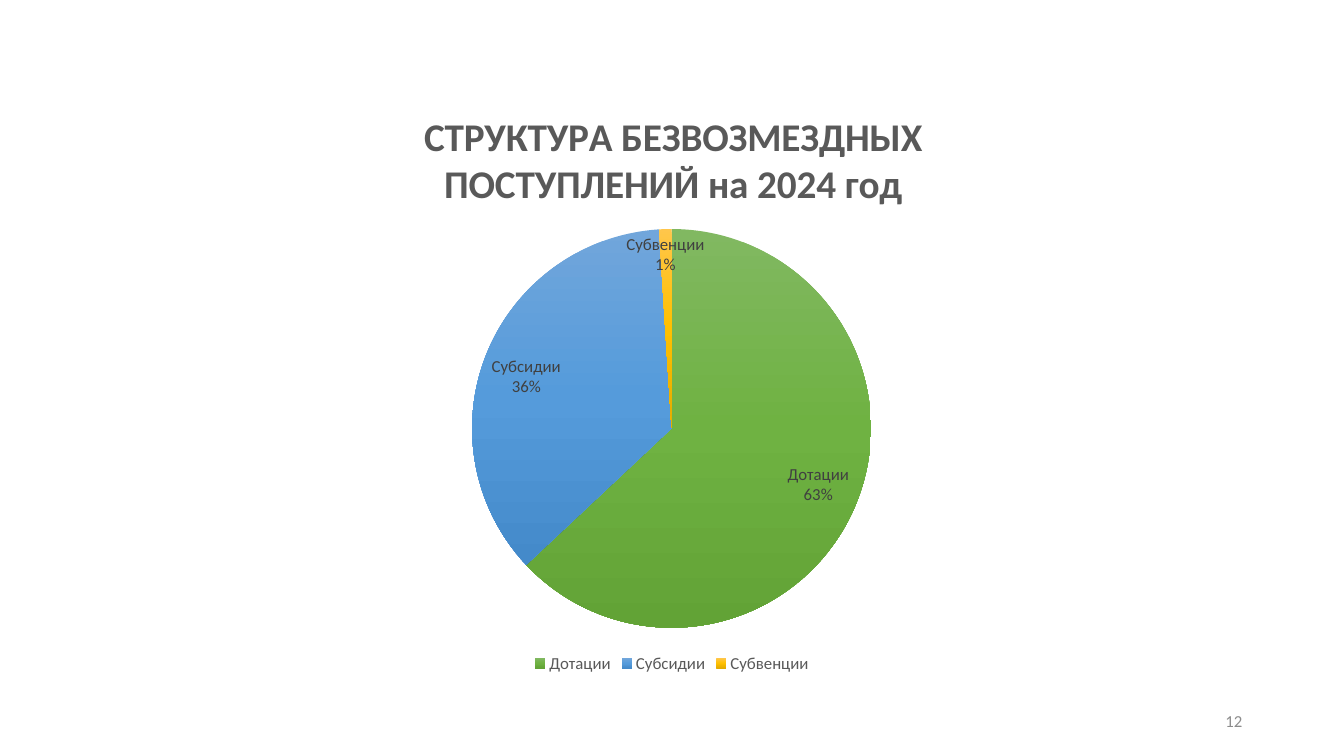
from copy import deepcopy

from pptx import Presentation
from pptx.chart.data import CategoryChartData
from pptx.dml.color import RGBColor
from pptx.enum.chart import XL_CHART_TYPE, XL_LABEL_POSITION, XL_LEGEND_POSITION
from pptx.enum.text import MSO_ANCHOR, PP_ALIGN
from pptx.oxml import parse_xml
from pptx.oxml.ns import nsdecls
from pptx.util import Inches, Pt

PIE = XL_CHART_TYPE.PIE
INSIDE_END = XL_LABEL_POSITION.INSIDE_END
BOTTOM = XL_LEGEND_POSITION.BOTTOM
MIDDLE = MSO_ANCHOR.MIDDLE
RIGHT = PP_ALIGN.RIGHT

FONT = "Calibri"
BLACK = RGBColor(0x00, 0x00, 0x00)
TITLE_GREY = RGBColor(0x59, 0x59, 0x59)
LABEL_GREY = RGBColor(0x40, 0x40, 0x40)
NUMBER_GREY = RGBColor(0x8C, 0x8C, 0x8C)
GREENS = [RGBColor(0x81, 0xB8, 0x61), RGBColor(0x6F, 0xB2, 0x42), RGBColor(0x62, 0xA3, 0x36)]
BLUES = [RGBColor(0x71, 0xA6, 0xDB), RGBColor(0x55, 0x9B, 0xDB), RGBColor(0x44, 0x8A, 0xCA)]
GOLDS = [RGBColor(0xFF, 0xC6, 0x4B), RGBColor(0xFF, 0xC0, 0x00), RGBColor(0xE3, 0xAB, 0x00)]

TITLE = ["СТРУКТУРА БЕЗВОЗМЕЗДНЫХ", "ПОСТУПЛЕНИЙ на 2024 год"]
RECEIPTS = [("Дотации", 63, GREENS), ("Субсидии", 36, BLUES), ("Субвенции", 1, GOLDS)]


def set_font(font, size, color, bold=False):
    font.name = FONT
    font.size = Pt(size)
    font.bold = bold
    font.color.rgb = color


def write(p, text, size=12, color=BLACK, bold=False, align=None):
    p.alignment = align
    r = p.add_run()
    r.text = text
    set_font(r.font, size, color, bold)


def layout_xml(x, y, w=None, h=None):
    """Manual chart layout in fractions of the chart area."""
    target = '<c:layoutTarget val="inner"/>' if w else ""
    size = f'<c:w val="{w}"/><c:h val="{h}"/>' if w else ""
    return parse_xml(
        f'<c:layout {nsdecls("c")}><c:manualLayout>{target}'
        '<c:xMode val="edge"/><c:yMode val="edge"/>'
        f'<c:x val="{x}"/><c:y val="{y}"/>{size}</c:manualLayout></c:layout>')


def fill_gradient(fill, colors):
    """Three even stops running from top to bottom."""
    fill.gradient()
    fill.gradient_angle = 270
    stops = fill.gradient_stops
    first = stops[0]._gs
    first.addnext(deepcopy(first))
    for i, (stop, color) in enumerate(zip(fill.gradient_stops, colors)):
        stop.position = i / 2
        stop.color.rgb = color


def add_pie(slide, x, y, w, h):
    data = CategoryChartData()
    data.categories = [name for name, _, _ in RECEIPTS]
    data.add_series("Series 1", [value for _, value, _ in RECEIPTS])
    chart = slide.shapes.add_chart(
        PIE, Inches(x), Inches(y), Inches(w), Inches(h), data).chart
    set_font(chart.font, 10, BLACK)

    # Title
    chart.has_title = True
    tf = chart.chart_title.text_frame
    for i, line in enumerate(TITLE):
        p = tf.add_paragraph() if i else tf.paragraphs[0]
        write(p, line, size=28, color=TITLE_GREY, bold=True)
    title = chart.chart_title._element
    for old in title.xpath("c:layout"):
        title.remove(old)
    title.xpath("c:tx")[0].addnext(layout_xml(0.22, 0.05))

    # Slices
    plot = chart.plots[0]
    plot.vary_by_categories = True
    for i, (_, _, colors) in enumerate(RECEIPTS):
        fmt = plot.series[0].points[i].format
        fill_gradient(fmt.fill, colors)
        fmt.line.fill.background()
    area = chart._chartSpace.xpath("c:chart/c:plotArea")[0]
    for old in area.xpath("c:layout"):
        area.remove(old)
    area.insert(0, layout_xml(0.277, 0.25, 0.445, 0.667))

    # Labels and legend
    labels = plot.series[0].data_labels
    labels.show_category_name = True
    labels.show_percentage = True
    labels.show_value = False
    labels.position = INSIDE_END
    set_font(labels.font, 12, LABEL_GREY)
    chart.has_legend = True
    chart.legend.position = BOTTOM
    chart.legend.include_in_layout = False
    set_font(chart.legend.font, 12, TITLE_GREY)


def add_slide_number(slide, x, y, w, h):
    tf = slide.shapes.add_textbox(Inches(x), Inches(y), Inches(w), Inches(h)).text_frame
    tf.word_wrap = True
    tf.vertical_anchor = MIDDLE
    write(tf.paragraphs[0], "12", color=NUMBER_GREY, align=RIGHT)


def main():
    prs = Presentation()
    prs.slide_width, prs.slide_height = Inches(13.33), Inches(7.5)
    s = prs.slides.add_slide(prs.slide_layouts[6])
    add_pie(s, 2.22, 0.79, 8.89, 5.93)
    add_slide_number(s, 9.42, 6.95, 3, 0.4)
    prs.save("out.pptx")


if __name__ == "__main__":
    main()
